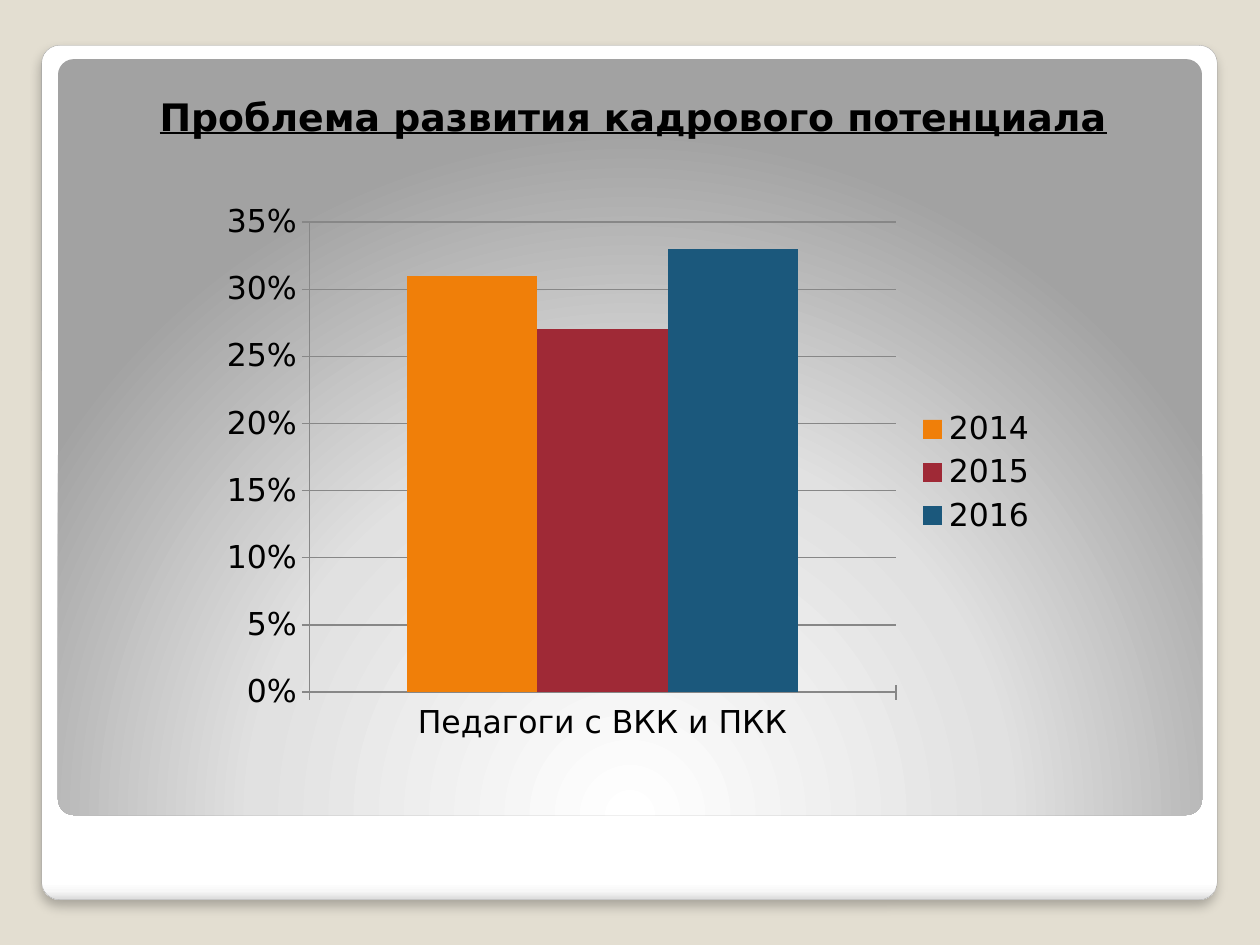
from dataclasses import dataclass

import pptx
import pptx.chart.data
import pptx.dml.color
import pptx.enum.chart
import pptx.enum.shapes
import pptx.enum.text
import pptx.oxml
import pptx.oxml.ns
import pptx.util

Pt = pptx.util.Pt
FONT = "DejaVu Sans"
BLACK = "000000"
GRID = "878787"


@dataclass
class Panel:
    left: float
    top: float
    width: float
    height: float
    stops: list[tuple[int, str]]
    direction: str
    line: str | None = None
    effects: str = ""


@dataclass
class Year:
    name: str
    share: float
    color: str


PANELS = [
    Panel(23.8, 25.9, 671.8, 488.2,
          [(0, "FFFFFF"), (98, "FFFFFF"), (99, "F7F7F7"), (100, "DADADA")],
          '<a:lin ang="5400000" scaled="0"/>', "A4A4A4",
          '<a:outerShdw blurRad="76200" dist="50800" dir="5400000" algn="tl" rotWithShape="0">'
          '<a:srgbClr val="000000"><a:alpha val="25000"/></a:srgbClr></a:outerShdw>'),
    Panel(33.1, 33.8, 653.8, 432,
          [(0, "FFFFFF"), (55, "E1E1E1"), (100, "A2A2A2")],
          '<a:path path="circle">'
          '<a:fillToRect l="50000" t="175000" r="50000" b="-75000"/></a:path>'),
]
YEARS = [
    Year("2014", 0.31, "F07F09"),
    Year("2015", 0.27, "9F2936"),
    Year("2016", 0.33, "1B587C"),
]


def rgb(color: str) -> pptx.dml.color.RGBColor:
    return pptx.dml.color.RGBColor.from_string(color)


def element(tag: str, content: str):
    return pptx.oxml.parse_xml(
        f'<a:{tag} {pptx.oxml.ns.nsdecls("a")}>{content}</a:{tag}>')


def format_font(font, size: float) -> None:
    font.name = FONT
    font.size = Pt(size)
    font.color.rgb = rgb(BLACK)


def add_panel(s, panel: Panel) -> None:
    sp = s.shapes.add_shape(
        pptx.enum.shapes.MSO_SHAPE.ROUNDED_RECTANGLE,
        Pt(panel.left), Pt(panel.top), Pt(panel.width), Pt(panel.height))
    sp.adjustments[0] = 0.021
    if panel.line:
        sp.line.color.rgb = rgb(panel.line)
        sp.line.width = Pt(0.16)
    else:
        sp.line.fill.background()
    sp.fill.background()
    stops = "".join(f'<a:gs pos="{pos * 1000}"><a:srgbClr val="{color}"/></a:gs>'
                    for pos, color in panel.stops)
    sp_pr = sp.fill._xPr
    sp_pr.replace(sp_pr.find(pptx.oxml.ns.qn("a:noFill")),
                  element("gradFill", f"<a:gsLst>{stops}</a:gsLst>{panel.direction}"))
    sp_pr.append(element("effectLst", panel.effects))


def add_title(s, text: str) -> None:
    sp = s.shapes.add_textbox(Pt(39.6), Pt(50.4), Pt(644.4), Pt(32.4))
    tf = sp.text_frame
    tf.word_wrap = True
    tf.vertical_anchor = pptx.enum.text.MSO_ANCHOR.BOTTOM
    tf.text = text
    p = tf.paragraphs[0]
    p.alignment = pptx.enum.text.PP_ALIGN.CENTER
    r = p.runs[0]
    format_font(r.font, 21.6)
    r.font.bold = True
    r.font.underline = True


def add_share_chart(s, category: str, years: list[Year]) -> None:
    data = pptx.chart.data.CategoryChartData(number_format="0%")
    data.categories = [category]
    for year in years:
        data.add_series(year.name, [year.share])
    chart = s.shapes.add_chart(
        pptx.enum.chart.XL_CHART_TYPE.COLUMN_CLUSTERED,
        Pt(120), Pt(110), Pt(480), Pt(320), data).chart
    format_font(chart.font, 18)
    chart.has_title = False
    chart.has_legend = True
    chart.legend.position = pptx.enum.chart.XL_LEGEND_POSITION.RIGHT
    chart.legend.include_in_layout = False

    plot = chart.plots[0]
    plot.gap_width = 150
    plot.overlap = 0
    plot.vary_by_categories = False
    for series, year in zip(plot.series, years):
        series.format.fill.solid()
        series.format.fill.fore_color.rgb = rgb(year.color)

    for axis in (chart.category_axis, chart.value_axis):
        axis.major_tick_mark = pptx.enum.chart.XL_TICK_MARK.CROSS
        axis.format.line.color.rgb = rgb(GRID)
    axis = chart.value_axis
    axis.minimum_scale, axis.maximum_scale, axis.major_unit = 0, 0.35, 0.05
    axis.has_major_gridlines = True
    axis.major_gridlines.format.line.color.rgb = rgb(GRID)
    axis.tick_labels.number_format = "0%"
    axis.tick_labels.number_format_is_linked = False


def main() -> None:
    """Build the slide on staff qualification and save it."""
    prs = pptx.Presentation()
    prs.slide_width, prs.slide_height = Pt(720), Pt(540)
    s = prs.slides.add_slide(prs.slide_layouts[6])
    s.background.fill.solid()
    s.background.fill.fore_color.rgb = rgb("E3DED1")
    for panel in PANELS:
        add_panel(s, panel)
    add_title(s, "Проблема развития кадрового потенциала")
    add_share_chart(s, "Педагоги с ВКК и ПКК", YEARS)
    prs.save("out.pptx")


if __name__ == "__main__":
    main()
